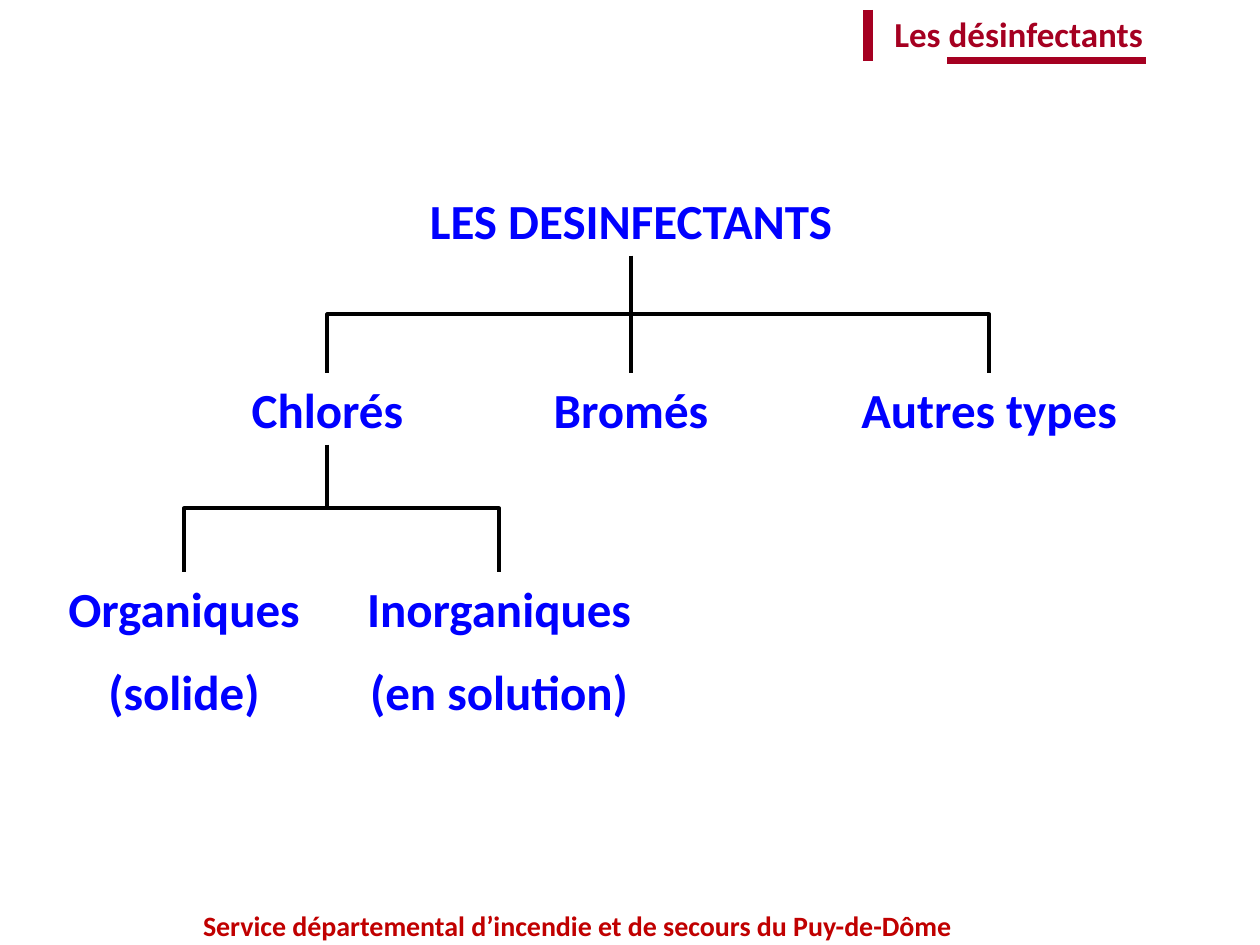
from dataclasses import dataclass

from lxml.etree import SubElement
from pptx import Presentation
from pptx.dml.color import RGBColor
from pptx.enum.shapes import MSO_CONNECTOR
from pptx.enum.text import MSO_AUTO_SIZE, PP_ALIGN
from pptx.oxml.ns import qn
from pptx.shapes.autoshape import Shape
from pptx.shapes.connector import Connector
from pptx.slide import Slide
from pptx.util import Cm, Pt


@dataclass(frozen=True)
class Theme:
    font: str = "Calibri"
    footer_color: RGBColor = RGBColor(0xC0, 0x00, 0x00)
    title_color: RGBColor = RGBColor(0xA5, 0x00, 0x21)
    node_color: RGBColor = RGBColor(0x00, 0x00, 0xFF)
    branch_color: RGBColor = RGBColor(0x00, 0x00, 0x00)
    footer_size: float = 16
    title_size: float = 20
    node_size: float = 28
    branch_width: float = 2.25


@dataclass(frozen=True)
class Node:
    """One entry of the tree; lengths are in centimetres."""
    lines: tuple[str, ...]
    center: float
    top: float
    width: float
    height: float = 1.45
    parent: str | None = None


@dataclass(frozen=True)
class Rule:
    """One straight accent line of the title; lengths are in centimetres."""
    start: tuple[float, float]
    end: tuple[float, float]
    weight: float


THEME = Theme()
MIDDLE_TOP, LOWER_TOP, LOWER_HEIGHT = 7.52, 11.53, 3.25
NODES = (
    Node(("LES DESINFECTANTS",), 12.72, 3.71, 8.71),
    Node(("Chlorés",), 6.6, MIDDLE_TOP, 3.61, parent="LES DESINFECTANTS"),
    Node(("Bromés",), 12.72, MIDDLE_TOP, 3.66, parent="LES DESINFECTANTS"),
    Node(("Autres types",), 19.94, MIDDLE_TOP, 5.72, parent="LES DESINFECTANTS"),
    Node(("Organiques", "(solide)"), 3.71, LOWER_TOP, 5.23, LOWER_HEIGHT, "Chlorés"),
    Node(("Inorganiques", "(en solution)"), 10.06, LOWER_TOP, 5.89, LOWER_HEIGHT, "Chlorés"),
)
TITLE_RULES = (
    Rule((19.1, 1.22), (23.11, 1.22), 4.5),
    Rule((17.5, 0.2), (17.5, 1.22), 6),
)


def add_text(slide: Slide, lines: tuple[str, ...], left: float, top: float,
             width: float, height: float, size: float, color: RGBColor,
             align: PP_ALIGN = PP_ALIGN.CENTER, wrap: bool = True) -> Shape:
    box = slide.shapes.add_textbox(Cm(left), Cm(top), Cm(width), Cm(height))
    frame = box.text_frame
    frame.word_wrap = wrap
    frame.auto_size = MSO_AUTO_SIZE.SHAPE_TO_FIT_TEXT
    frame.text = "\n".join(lines)
    for index, para in enumerate(frame.paragraphs):
        para.alignment = align
        if index:
            para.space_before = Pt(size / 2)
        para.font.name = THEME.font
        para.font.size = Pt(size)
        para.font.bold = True
        para.font.color.rgb = color
    return box


def style_line(connector: Connector, color: RGBColor, weight: float) -> None:
    connector.line.color.rgb = color
    connector.line.width = Pt(weight)
    SubElement(connector._element.spPr, qn("a:effectLst"))


def add_rule(slide: Slide, rule: Rule) -> None:
    ends = [Cm(value) for value in rule.start + rule.end]
    connector = slide.shapes.add_connector(MSO_CONNECTOR.STRAIGHT, *ends)
    style_line(connector, THEME.title_color, rule.weight)


def add_branch(slide: Slide, parent: Shape, child: Shape) -> None:
    """Join parent and child by an elbow that leaves the parent downwards."""
    start_x, start_y = parent.left + parent.width // 2, parent.top + parent.height
    end_x, end_y = child.left + child.width // 2, child.top
    connector = slide.shapes.add_connector(
        MSO_CONNECTOR.ELBOW, start_x, start_y, end_x, end_y)
    connector.begin_connect(parent, 2)
    connector.end_connect(child, 0)

    # A vertical elbow is a horizontal one turned by a quarter about its centre.
    drop, spread = end_y - start_y, abs(end_x - start_x)
    connector.left = (start_x + end_x - drop) // 2
    connector.top = (start_y + end_y - spread) // 2
    connector.width, connector.height = drop, spread
    goes_left = end_x < start_x
    transform = connector._element.spPr.find(qn("a:xfrm"))
    transform.set("rot", "5400000" if goes_left else "16200000")
    transform.set("flipH", "0" if goes_left else "1")
    transform.set("flipV", "0")
    style_line(connector, THEME.branch_color, THEME.branch_width)


def add_tree(slide: Slide) -> None:
    boxes: dict[str, Shape] = {}
    for node in NODES:
        boxes[node.lines[0]] = add_text(
            slide, node.lines, node.center - node.width / 2, node.top,
            node.width, node.height, THEME.node_size, THEME.node_color, wrap=False)
    for node in NODES:
        if node.parent:
            add_branch(slide, boxes[node.parent], boxes[node.lines[0]])


def main() -> None:
    deck = Presentation()
    deck.slide_width, deck.slide_height = Cm(25.4), Cm(19.05)
    page = deck.slides.add_slide(deck.slide_layouts[6])
    add_text(page, ("Service départemental d’incendie et de secours du Puy-de-Dôme",),
             0, 18.19, 23.29, 0.94, THEME.footer_size, THEME.footer_color)
    add_text(page, ("Les désinfectants",), 12.7, 0.13, 10.59, 1.12,
             THEME.title_size, THEME.title_color, PP_ALIGN.RIGHT)
    for rule in TITLE_RULES:
        add_rule(page, rule)
    add_tree(page)
    deck.save("out.pptx")


if __name__ == "__main__":
    main()
